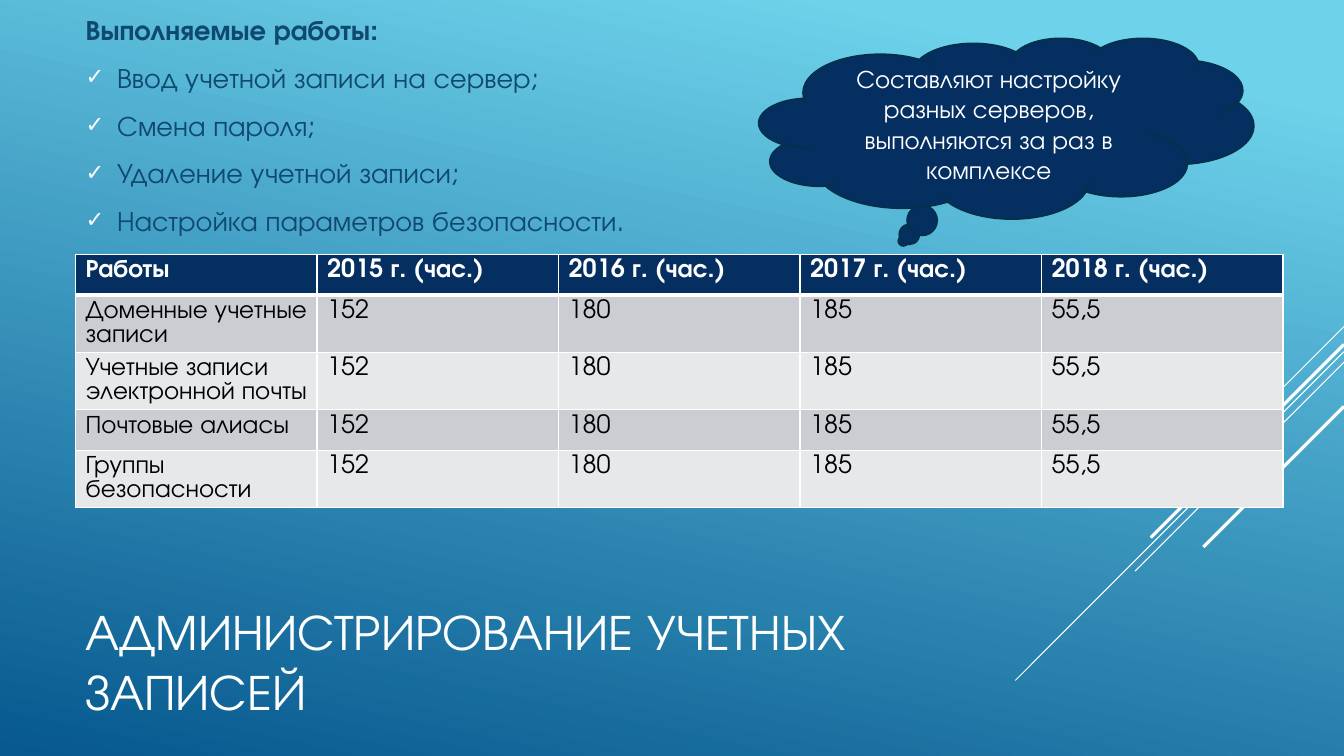
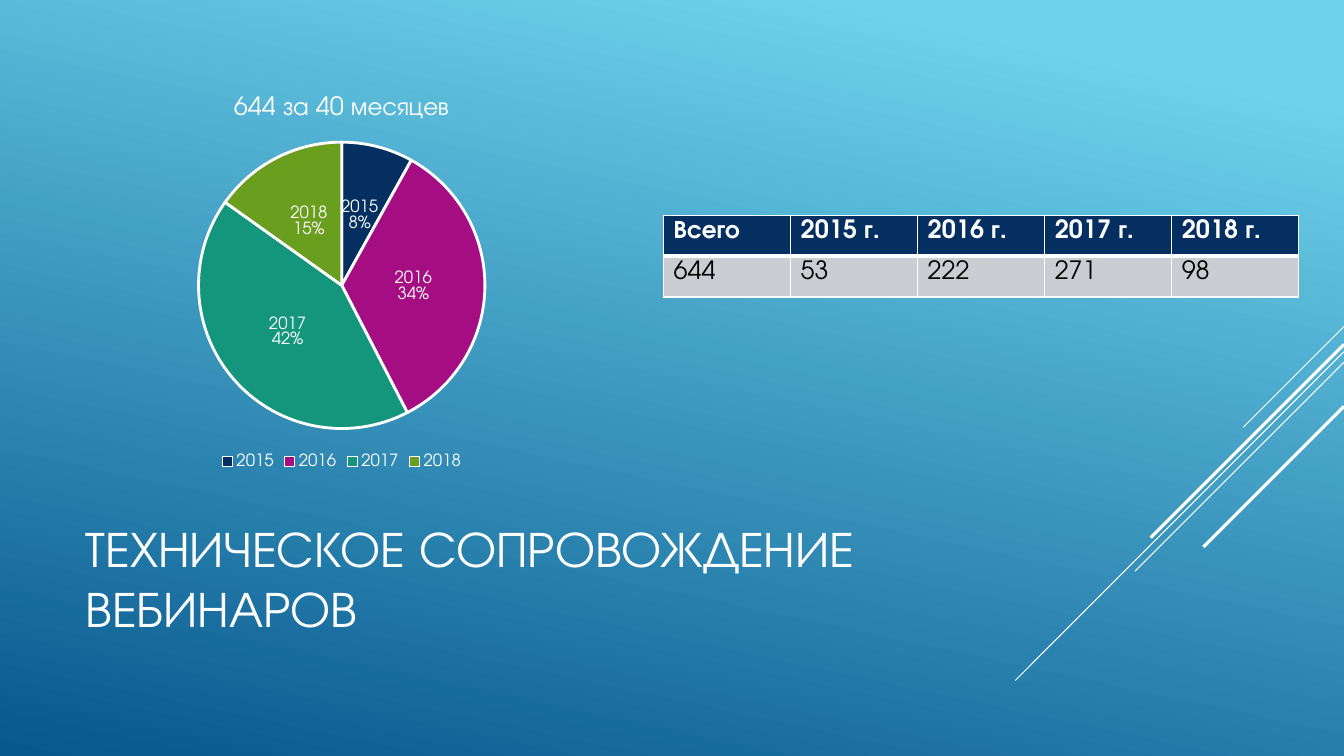
from dataclasses import dataclass

import pptx
import pptx.chart.data
import pptx.dml.color
import pptx.enum.chart
import pptx.enum.dml
import pptx.enum.shapes
import pptx.enum.text
import pptx.oxml
import pptx.oxml.ns
import pptx.util


@dataclass(frozen=True)
class Theme:
    font: str = "TeX Gyre Adventor"
    sky: str = "6ED2EB"
    deep: str = "06588E"
    white: str = "FFFFFF"
    black: str = "000000"
    navy: str = "052F61"
    cloud_edge: str = "043148"
    body: str = "0F496F"
    bands: tuple = ("CCCDD2", "E7E8EA")
    slices: tuple = ("052F61", "A50E82", "14967C", "6A9E1F")
    title_size: int = 36
    body_size: int = 20
    text_size: int = 18
    label_size: int = 12


THEME = Theme()
EMU_PER_PX = 9525
SLIDE_W, SLIDE_H = 1280, 720
LEFT, TEXT_W, TITLE_H = 72, 896, 158
ROW_H = 39
# Diagonal rays from the right edge: start height, run, line width in points
RAYS = ((311, 96, 0.75), (335, 313, 0.75), (345, 199, 0.75),
        (328, 184, 2.25), (387, 134, 2.25))
YEARS = ("2015", "2016", "2017", "2018")


def px(n):
    return pptx.util.Emu(n * EMU_PER_PX)


def rgb(color):
    return pptx.dml.color.RGBColor.from_string(color)


def fill(target, color):
    target.fill.solid()
    target.fill.fore_color.rgb = rgb(color)


def outline(line, color, width):
    line.color.rgb = rgb(color)
    line.width = pptx.util.Pt(width)


def set_font(font, size, color=THEME.white, bold=False):
    font.name = THEME.font
    font.size = pptx.util.Pt(size)
    font.bold = bold
    font.color.rgb = rgb(color)


def add_xml(parent, xml):
    """Append a DrawingML element, given without its namespace declaration."""
    head, mark, rest = xml.partition(" ")
    declared = f"{head} {pptx.oxml.ns.nsdecls('a')} {rest}"
    parent.append(pptx.oxml.parse_xml(declared))


def place(sp, x, y, w, h):
    sp.left, sp.top, sp.width, sp.height = map(px, (x, y, w, h))


def set_background(master):
    bg = master.background.fill
    bg.gradient()
    bg.gradient_angle = 258
    for stop, position, color in zip(bg.gradient_stops, (0.1, 1), (THEME.sky, THEME.deep)):
        stop.position = position
        stop.color.rgb = rgb(color)


def add_rays(slide):
    for y, run, width in RAYS:
        ray = slide.shapes.add_connector(
            pptx.enum.shapes.MSO_CONNECTOR.STRAIGHT,
            px(SLIDE_W), px(y), px(SLIDE_W - run), px(y + run))
        outline(ray.line, THEME.white, width)
        add_xml(ray.element.spPr, "<a:effectLst />")


def frame_text(sp):
    tf = sp.text_frame
    tf.word_wrap = True
    tf.auto_size = pptx.enum.text.MSO_AUTO_SIZE.NONE
    tf.vertical_anchor = pptx.enum.text.MSO_ANCHOR.MIDDLE
    return tf


def add_slide(prs, layout, title, title_top):
    slide = prs.slides.add_slide(prs.slide_layouts.get_by_name(layout))
    add_rays(slide)
    sp = slide.shapes.title
    place(sp, LEFT, title_top, TEXT_W, TITLE_H)
    p = frame_text(sp).paragraphs[0]
    p.text = title
    p.alignment = pptx.enum.text.PP_ALIGN.LEFT
    set_font(p.font, THEME.title_size)
    return slide


def set_bullet(p, char):
    """Give the paragraph a hanging bullet, or none when char is empty."""
    pPr = p._p.get_or_add_pPr()
    indent = px(30) if char else 0
    pPr.set("marL", str(indent))
    pPr.set("indent", str(-indent))
    if char:
        add_xml(pPr, f'<a:buClr ><a:srgbClr val="{THEME.white}"/></a:buClr>')
        add_xml(pPr, '<a:buSzPct val="80000"/>')
        add_xml(pPr, f'<a:buChar char="{char}"/>')
    else:
        add_xml(pPr, "<a:buNone />")


def fill_list(sp, heading, items):
    tf = frame_text(sp)
    tf.text = "\n".join((heading, *items))
    for i, p in enumerate(tf.paragraphs):
        p.space_after = pptx.util.Pt(6)
        set_bullet(p, "✓" if i else "")
        set_font(p.font, THEME.body_size, THEME.body, bold=i == 0)


def set_borders(cell, row):
    """White 1 pt edges, with a 3 pt rule between header and body."""
    tcPr = cell._tc.get_or_add_tcPr()
    widths = {"L": 1, "R": 1, "T": 3 if row == 1 else 1, "B": 3 if row == 0 else 1}
    for side, width in widths.items():
        add_xml(tcPr, f'<a:ln{side} w="{pptx.util.Pt(width)}"><a:solidFill>'
                      f'<a:srgbClr val="{THEME.white}"/></a:solidFill></a:ln{side}>')


def add_table(slide, x, y, col_w, rows):
    n_cols = len(rows[0])
    table = slide.shapes.add_table(
        len(rows), n_cols, px(x), px(y), px(col_w * n_cols), px(ROW_H * len(rows))).table
    for i, row in enumerate(rows):
        header = i == 0
        for j, text in enumerate(row):
            cell = table.cell(i, j)
            set_borders(cell, i)
            fill(cell, THEME.navy if header else THEME.bands[(i - 1) % 2])
            cell.text = text
            set_font(cell.text_frame.paragraphs[0].font, THEME.text_size,
                     THEME.white if header else THEME.black, bold=header)


def add_cloud(slide, x, y, w, h, text):
    sp = slide.shapes.add_shape(
        pptx.enum.shapes.MSO_SHAPE.CLOUD_CALLOUT, px(x), px(y), px(w), px(h))
    sp.shadow.inherit = False
    fill(sp, THEME.navy)
    outline(sp.line, THEME.cloud_edge, 1.25)
    p = frame_text(sp).paragraphs[0]
    p.text = text
    p.alignment = pptx.enum.text.PP_ALIGN.CENTER
    set_font(p.font, THEME.text_size)


def add_pie(slide, x, y, w, h, title, categories, values):
    data = pptx.chart.data.CategoryChartData()
    data.categories = categories
    data.add_series("Series 1", values)
    chart = slide.shapes.add_chart(
        pptx.enum.chart.XL_CHART_TYPE.PIE, px(x), px(y), px(w), px(h), data).chart
    set_font(chart.font, THEME.label_size)

    chart.has_title = True
    chart.chart_title.include_in_layout = False
    p = chart.chart_title.text_frame.paragraphs[0]
    p.text = title
    set_font(p.font, THEME.text_size)

    chart.has_legend = True
    chart.legend.position = pptx.enum.chart.XL_LEGEND_POSITION.BOTTOM
    chart.legend.include_in_layout = False
    set_font(chart.legend.font, THEME.label_size)

    chart.plots[0].vary_by_categories = True
    series = chart.plots[0].series[0]
    for i, color in enumerate(THEME.slices):
        part = series.points[i].format
        fill(part, color)
        outline(part.line, THEME.white, 2)

    labels = series.data_labels
    labels.show_value = False
    labels.show_category_name = True
    labels.show_percentage = True
    labels.number_format = "0%"
    labels.number_format_is_linked = False
    labels.position = pptx.enum.chart.XL_LABEL_POSITION.CENTER
    set_font(labels.font, THEME.label_size)
    for flag in list(chart.element.iter(pptx.oxml.ns.qn("c:showBubbleSize"))):
        flag.addnext(pptx.oxml.parse_xml(
            f"<c:separator {pptx.oxml.ns.nsdecls('c')}>\n</c:separator>"))


def build_accounts(prs):
    slide = add_slide(prs, "Title and Content", "АДМИНИСТРИРОВАНИЕ УЧЕТНЫХ ЗАПИСЕЙ", 550)
    body = slide.placeholders[1]
    place(body, LEFT, 0, TEXT_W, 238)
    fill_list(body, "Выполняемые работы:", (
        "Ввод учетной записи на сервер;",
        "Смена пароля;",
        "Удаление учетной записи;",
        "Настройка параметров безопасности."))
    hours = ("152", "180", "185", "55,5")
    works = ("Доменные учетные записи", "Учетные записи электронной почты",
             "Почтовые алиасы", "Группы безопасности")
    header = ("Работы", *(f"{year} г. (час.)" for year in YEARS))
    add_table(slide, LEFT, 242, 230, [header, *((work, *hours) for work in works)])
    add_cloud(slide, 723, 36, 471, 172,
              "Составляют настройку разных серверов, выполняются за раз в комплексе")


def build_webinars(prs):
    slide = add_slide(prs, "Title Only", "ТЕХНИЧЕСКОЕ СОПРОВОЖДЕНИЕ ВЕБИНАРОВ", 471)
    add_pie(slide, LEFT, 72, 507, 379, "644 за 40 месяцев", YEARS, (8, 34, 42, 15))
    header = ("Всего", *(f"{year} г." for year in YEARS))
    add_table(slide, 632, 205, 121, [header, ("644", "53", "222", "271", "98")])


def main():
    prs = pptx.Presentation()
    prs.slide_width, prs.slide_height = px(SLIDE_W), px(SLIDE_H)
    set_background(prs.slide_master)
    build_accounts(prs)
    build_webinars(prs)
    prs.save("out.pptx")


if __name__ == "__main__":
    main()
